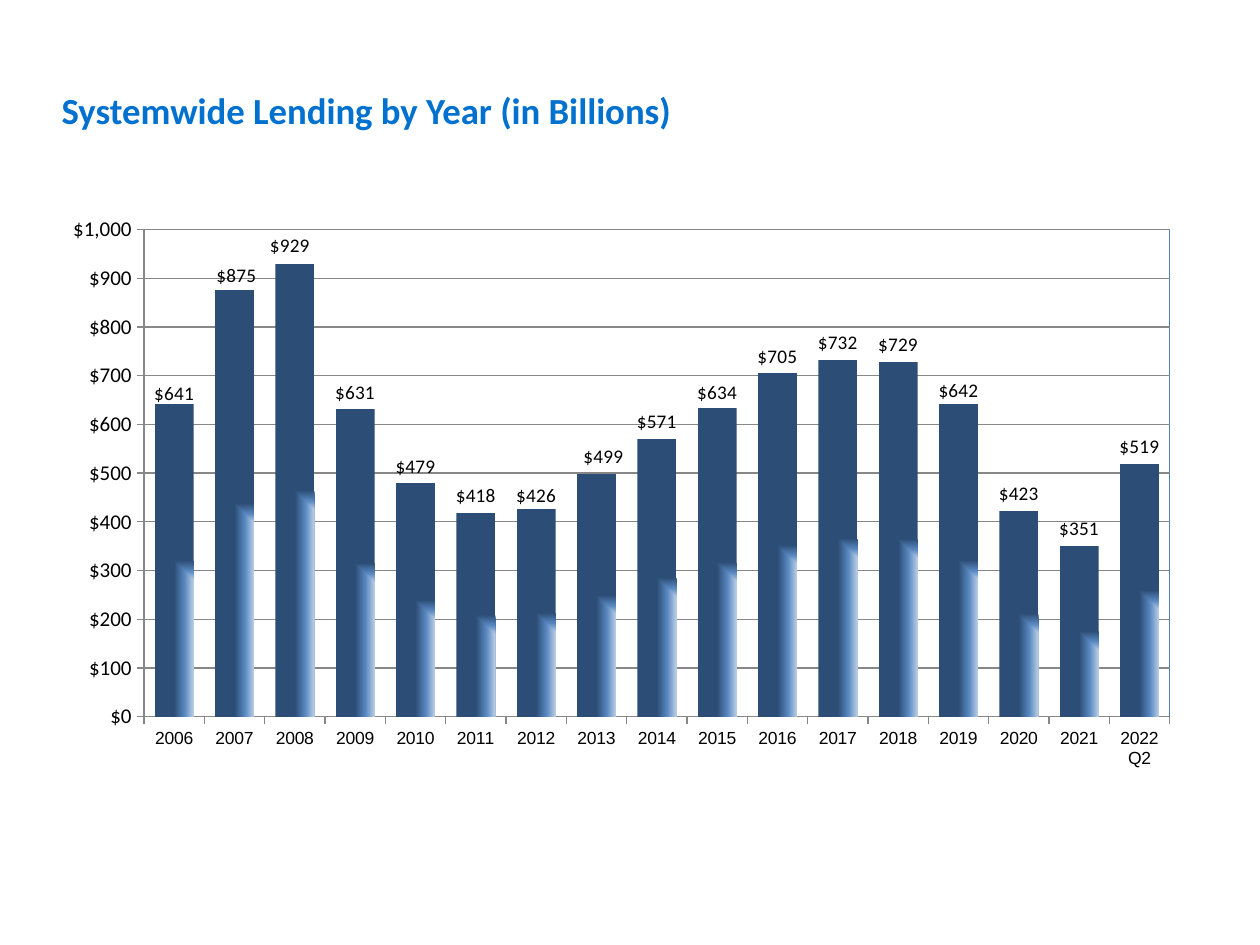
from lxml import etree
from pptx import Presentation
from pptx import util as u
from pptx.chart.data import CategoryChartData
from pptx.dml.color import RGBColor
from pptx.enum import chart as charts, text
from pptx.oxml import parse_xml
from pptx.oxml.ns import nsdecls, qn

YEARS = [str(year) for year in range(2006, 2022)] + ["2022 Q2"]
LENDING = [641, 875, 929, 631, 479, 418, 426, 499, 571, 634,
           705, 732, 729, 642, 423, 351, 519]
DOLLARS = '"$"#,##0'
CHART_BOX = (42, 194, 1159, 697)
PLOT_SHARE = {"x": 0.088, "y": 0.051, "w": 0.885, "h": 0.699}
BAR_STOPS = [(0, "B9CDE5"), (46, "5887C0"), (100, "2C4D75")]
LABEL_SHIFTS = {0: (0, 6), 1: (2, 2), 2: (-5, -1), 6: (0, 4),
                7: (7, 0), 9: (0, 2), 13: (0, 4)}


def px(length):
    """Turn px at 126 to the inch into EMU."""
    return u.Emu(round(length * 914400 / 126))


def color(value):
    """Turn a hex string into a colour."""
    return RGBColor.from_string(value)


def style_font(font, size, name="Calibri", bold=False, fill="000000"):
    """Set the face, size, weight and colour of a font."""
    font.name = name
    font.size = u.Pt(size)
    font.bold = bold
    font.color.rgb = color(fill)


def add_title(slide, wording):
    """Place and format the title placeholder."""
    title = slide.shapes.title
    title.left, title.top, title.width, title.height = map(px, (49, 78, 1042, 64))
    frame = title.text_frame
    frame.word_wrap = True
    frame.vertical_anchor = text.MSO_ANCHOR.MIDDLE
    paragraph = frame.paragraphs[0]
    paragraph.alignment = text.PP_ALIGN.LEFT
    run = paragraph.add_run()
    run.text = wording
    style_font(run.font, 21, bold=True, fill="0071CE")


def manual_layout(shares, inner=False):
    """Build a chart layout element from shares of the chart's size."""
    layout = parse_xml(f'<c:layout {nsdecls("c")}><c:manualLayout/></c:layout>')
    settings = dict(shares)
    if inner:
        settings = {"layoutTarget": "inner", "xMode": "edge", "yMode": "edge", **shares}
    for tag, value in settings.items():
        etree.SubElement(layout[0], qn(f"c:{tag}")).set("val", str(value))
    return layout


def place_plot(chart):
    """Fix the inner plot area and give it a thin blue border."""
    plot_area = chart.plots[0]._element.getparent()
    for layout in plot_area.findall(qn("c:layout")):
        plot_area.remove(layout)
    plot_area.insert(0, manual_layout(PLOT_SHARE, inner=True))
    plot_area.append(parse_xml(
        f'<c:spPr {nsdecls("c", "a")}><a:noFill/><a:ln w="9525"><a:solidFill>'
        '<a:srgbClr val="4F81BD"/></a:solidFill></a:ln></c:spPr>'))


def style_axis(axis, size, name):
    """Give an axis its font, outer ticks and grey line."""
    style_font(axis.tick_labels.font, size, name)
    axis.major_tick_mark = charts.XL_TICK_MARK.OUTSIDE
    axis.minor_tick_mark = charts.XL_TICK_MARK.NONE
    axis.format.line.color.rgb = color("878787")
    axis.format.line.width = u.Pt(0.75)


def fill_bars(series):
    """Fill the bars with a gradient that starts at the lower right corner."""
    stops = "".join(f'<a:gs pos="{share * 1000}"><a:srgbClr val="{value}"/></a:gs>'
                    for share, value in BAR_STOPS)
    series.format.fill.background()
    properties = series._element.find(qn("c:spPr"))
    properties.replace(properties.find(qn("a:noFill")), parse_xml(
        f'<a:gradFill {nsdecls("a")} rotWithShape="1"><a:gsLst>{stops}</a:gsLst>'
        '<a:path path="rect"><a:fillToRect l="100000" t="100000"/></a:path></a:gradFill>'))
    series.format.line.fill.background()


def label_bars(series):
    """Show dollar values above the bars, some of them nudged."""
    labels = series.data_labels
    labels.show_value = True
    labels.number_format = DOLLARS
    labels.number_format_is_linked = False
    labels.position = charts.XL_LABEL_POSITION.OUTSIDE_END
    style_font(labels.font, 11)
    for index, (right, down) in LABEL_SHIFTS.items():
        label = series.points[index].data_label
        style_font(label.font, 11)
        label.position = charts.XL_LABEL_POSITION.OUTSIDE_END
        element = label._get_or_add_dLbl()
        shares = {"x": right / CHART_BOX[2], "y": down / CHART_BOX[3]}
        number_format = etree.Element(qn("c:numFmt"), formatCode=DOLLARS, sourceLinked="0")
        element.insert(1, manual_layout(shares))
        element.insert(2, number_format)


def add_lending_chart(slide):
    """Add the column chart of lending by year."""
    data = CategoryChartData(number_format=DOLLARS)
    data.categories = YEARS
    data.add_series("Series 1", LENDING)
    chart = slide.shapes.add_chart(
        charts.XL_CHART_TYPE.COLUMN_CLUSTERED, *map(px, CHART_BOX), data).chart
    chart.has_legend = False
    chart.has_title = False
    style_font(chart.font, 18)
    place_plot(chart)
    style_axis(chart.category_axis, 10, "Arial")
    values = chart.value_axis
    style_axis(values, 12, "Calibri")
    values.minimum_scale, values.maximum_scale, values.major_unit = 0, 1000, 100
    values.tick_labels.number_format = DOLLARS
    values.tick_labels.number_format_is_linked = False
    values.has_major_gridlines = True
    values.major_gridlines.format.line.color.rgb = color("878787")
    values.major_gridlines.format.line.width = u.Pt(0.75)
    plot = chart.plots[0]
    plot.gap_width = 55
    plot.overlap = 100
    plot.vary_by_categories = False
    fill_bars(plot.series[0])
    label_bars(plot.series[0])


def main():
    """Build and save the slide."""
    presentation = Presentation()
    presentation.slide_width, presentation.slide_height = px(1260), px(945)
    slide = presentation.slides.add_slide(presentation.slide_layouts[5])
    add_title(slide, "Systemwide Lending by Year (in Billions)")
    add_lending_chart(slide)
    presentation.save("out.pptx")


if __name__ == "__main__":
    main()
